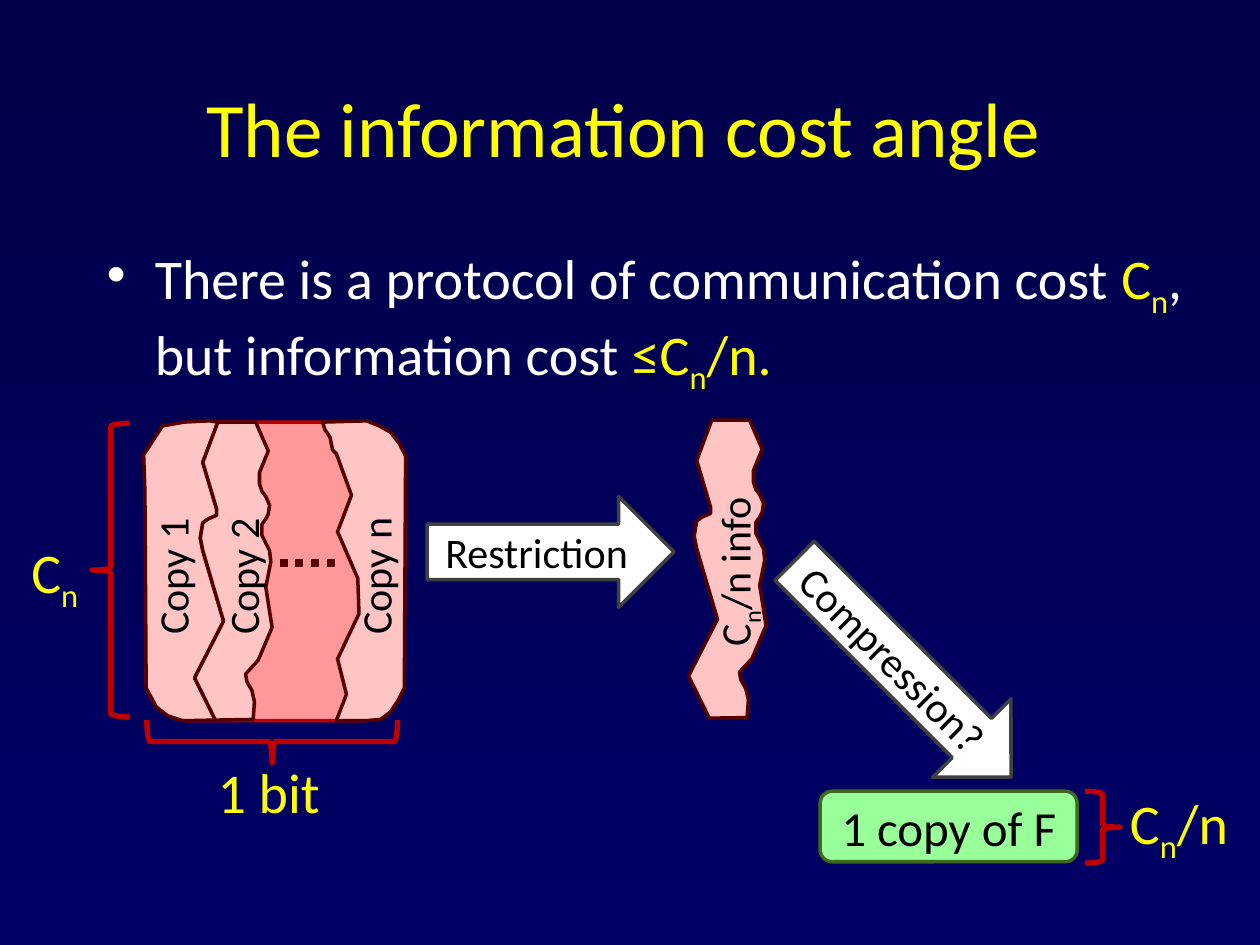
from lxml import etree
from pptx import Presentation
from pptx import util as u
from pptx.dml import color
from pptx.enum import dml, shapes, text
from pptx.oxml import ns

WIDTH, HEIGHT = u.Inches(10), u.Inches(7.5)
COLUMNS = 100
CELL = WIDTH // COLUMNS
FONT = "Calibri"
COLORS = {
    "night": "000049", "navy": "000066", "yellow": "FFFF00", "white": "FFFFFF",
    "black": "000000", "red": "C00000", "salmon": "FF9999", "pink": "FFC5C5",
    "maroon": "540000", "mint": "99FF99", "green": "3F691E", "gray": "404040",
}
SUBSCRIPT = "_"

SEAM = [(17.3, 33.5), (16.1, 36.7), (17.2, 40.4), (17.2, 40.9), (16.5, 41.2),
        (16.1, 41.5), (15.9, 42.7), (16.1, 43.7), (17.75, 49.3), (15.45, 53.8),
        (17.1, 57.15)]
WAVY_EDGE = [(20.3, 33.5), (21.3, 35.8), (20.6, 37.5), (20.6, 38.4), (20.8, 39),
             (21.1, 39.4), (21.4, 40.1), (21.3, 40.8), (21.1, 41.2), (20.8, 41.6),
             (20.8, 42.5), (21.1, 43.1), (21.4, 43.7), (21.5, 44.6), (21.1, 46.6),
             (21.6, 49.8), (20.5, 52.4), (19.5, 53.5), (19.6, 54.1), (20, 54.8),
             (20.2, 55.7), (20.1, 57.1)]
FIRST_EDGE = [(16.6, 33.4), (14.6, 33.5), (12.9, 33.8), (11.4, 36.1), (11.5, 39),
              (11.6, 54.6), (12.4, 56.1), (13.3, 56.8), (14.5, 57.2)]
LAST_PIECE = [(25.6, 33.5), (25.8, 34.1), (26.2, 34.7), (26.4, 35.7), (26.7, 36),
              (27.9, 39.3), (26.8, 42.2), (28.4, 45.9), (28.5, 48.7), (26.8, 52.3),
              (27.5, 55.1), (26.7, 57.2), (29, 57.2), (30.2, 57.1), (31, 56.5),
              (31.6, 55.6), (32.1, 54.6), (32.2, 36.2), (31.7, 35.2), (31, 34.3),
              (30.1, 33.8), (29.1, 33.4)]
MIDDLE_PIECE = WAVY_EDGE + SEAM[::-1]
INFO_SHIFT = (39.2, -0.15)


def rgb(name):
    return color.RGBColor.from_string(COLORS[name])


def cells(*counts):
    return [round(count * CELL) for count in counts]


def paint(shape, fill, outline, weight=2):
    shape.shadow.inherit = False
    if fill:
        shape.fill.solid()
        shape.fill.fore_color.rgb = rgb(fill)
    else:
        shape.fill.background()
    shape.line.color.rgb = rgb(outline)
    shape.line.width = u.Pt(weight)


def write(frame, pieces, size, align=text.PP_ALIGN.LEFT):
    frame.word_wrap = True
    paragraph = frame.paragraphs[0]
    paragraph.alignment = align
    for wording, ink in pieces:
        run = paragraph.add_run()
        run.text = wording.removeprefix(SUBSCRIPT)
        run.font.name = FONT
        run.font.size = u.Pt(size)
        run.font.color.rgb = rgb(ink)
        if wording.startswith(SUBSCRIPT):
            run._r.get_or_add_rPr().set("baseline", "-25000")
    return paragraph


def add_label(slide, area, pieces, size, align=text.PP_ALIGN.LEFT, turn=0):
    label = slide.shapes.add_textbox(*cells(*area))
    label.rotation = turn
    return label, write(label.text_frame, pieces, size, align)


def add_bullet(paragraph, indent):
    properties = paragraph._p.get_or_add_pPr()
    properties.set("marL", str(indent))
    properties.set("indent", str(-indent))
    etree.SubElement(properties, ns.qn("a:buChar")).set("char", "•")


def add_block(slide, kind, area, fill, outline, wording="", size=24, turn=0):
    block = slide.shapes.add_shape(kind, *cells(*area))
    block.rotation = turn
    paint(block, fill, outline)
    if wording:
        block.text_frame.vertical_anchor = text.MSO_ANCHOR.MIDDLE
        write(block.text_frame, [(wording, "black")], size, text.PP_ALIGN.CENTER)


def add_brace(slide, area, turn=0, mirrored=False):
    brace = slide.shapes.add_shape(shapes.MSO_SHAPE.LEFT_BRACE, *cells(*area))
    brace.rotation = turn
    paint(brace, None, "red", 3)
    if mirrored:
        brace._element.spPr.xfrm.set("flipH", "1")


def add_piece(slide, outline, shift=(0, 0)):
    corners = [cells(x + shift[0], y + shift[1]) for x, y in outline]
    builder = slide.shapes.build_freeform(*corners[0])
    builder.add_line_segments(corners[1:], close=True)
    paint(builder.convert_to_shape(), "pink", "maroon")


def add_dots(slide, start, end):
    dots = slide.shapes.add_connector(
        shapes.MSO_CONNECTOR.STRAIGHT, *cells(*start, *end))
    dots.line.color.rgb = rgb("maroon")
    dots.line.width = u.Pt(4.5)
    dots.line.dash_style = dml.MSO_LINE.ROUND_DOT
    etree.SubElement(dots._element.spPr, ns.qn("a:effectLst"))


def set_background(slide):
    fill = slide.background.fill
    fill.gradient()
    fill.gradient_angle = 270
    for stop, name in zip(fill.gradient_stops, ("night", "navy")):
        stop.color.rgb = rgb(name)


def add_statement(slide):
    title, _ = add_label(slide, (4, 3.8, 91, 12.5),
                         [("The information cost angle", "yellow")], 44,
                         text.PP_ALIGN.CENTER)
    title.text_frame.vertical_anchor = text.MSO_ANCHOR.MIDDLE
    _, claim = add_label(slide, (7.5, 18.8, 88.8, 28.4), [
        ("There is a protocol of communication cost ", "white"),
        ("C", "yellow"), ("_n", "yellow"),
        (", but information cost ", "white"),
        ("≤C", "yellow"), ("_n", "yellow"), ("/n.", "yellow")], 32)
    claim.space_before = u.Pt(6.4)
    add_bullet(claim, u.Inches(0.38))


def add_copies(slide):
    add_block(slide, shapes.MSO_SHAPE.ROUNDED_RECTANGLE,
              (11.6, 33.5, 20.4, 23.7), "salmon", "red")
    add_brace(slide, (7.3, 33.6, 3, 23.3))
    add_label(slide, (1.5, 42.2, 9, 6.4), [("C", "yellow"), ("_n", "yellow")], 32)
    add_piece(slide, FIRST_EDGE + SEAM[::-1])
    add_piece(slide, MIDDLE_PIECE)
    add_dots(slide, (22.2, 44.7), (26.7, 44.7))
    add_brace(slide, (19.9, 48.9, 3.4, 19.9), turn=90, mirrored=True)
    add_label(slide, (16.3, 59.6, 10.6, 6.4), [("1 bit", "yellow")], 32)
    add_piece(slide, LAST_PIECE)
    for number, left in (("1", 6.3), ("2", 11.9), ("n", 22.4)):
        add_label(slide, (left, 41.5, 14.7, 5),
                  [(f"Copy {number}", "black")], 24, turn=270)


def add_reduction(slide):
    arrow = shapes.MSO_SHAPE.RIGHT_ARROW
    add_block(slide, arrow, (33.9, 39.4, 19.6, 8.8), "white", "gray", "Restriction")
    add_piece(slide, MIDDLE_PIECE, INFO_SHIFT)
    add_label(slide, (50.9, 42.4, 14.7, 5),
              [("C", "black"), ("_n", "black"), ("/n info", "black")], 24, turn=270)
    add_block(slide, arrow, (59.5, 48.7, 24.3, 8.8), "white", "gray",
              "Compression?", turn=45)
    add_block(slide, shapes.MSO_SHAPE.ROUNDED_RECTANGLE,
              (65.1, 62.8, 20.4, 5.6), "mint", "green", "1 copy of F", 28)
    add_brace(slide, (86.1, 62.8, 2.8, 5.7), mirrored=True)
    add_label(slide, (88.7, 62.1, 11.3, 10),
              [("C", "yellow"), ("_n", "yellow"), ("/n", "yellow")], 32)


def main():
    deck = Presentation()
    deck.slide_width, deck.slide_height = WIDTH, HEIGHT
    slide = deck.slides.add_slide(deck.slide_layouts[6])
    set_background(slide)
    add_statement(slide)
    add_copies(slide)
    add_reduction(slide)
    deck.save("out.pptx")


if __name__ == "__main__":
    main()
